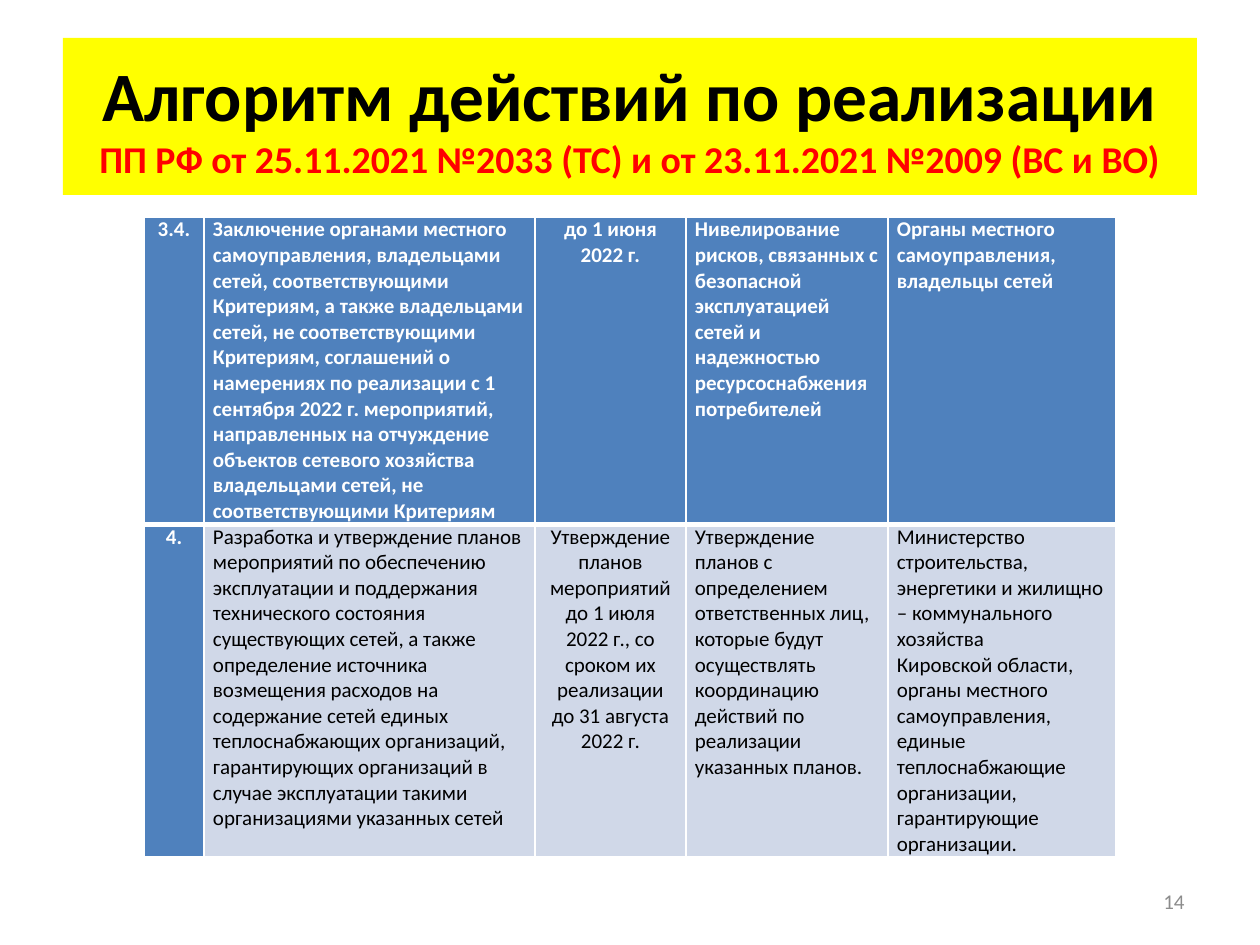
"""Build the action plan slide: a title banner, a table of steps and a page number."""
from dataclasses import dataclass

from lxml.etree import SubElement
from pptx import Presentation
from pptx.dml.color import RGBColor as RGB
from pptx.enum.shapes import MSO_SHAPE as SHAPE
from pptx.enum.text import MSO_ANCHOR as ANCHOR, PP_ALIGN as ALIGN
from pptx.oxml import parse_xml
from pptx.oxml.ns import nsdecls, qn
from pptx.util import Pt

EMU_PER_PX = 914400 / 126


@dataclass(frozen=True)
class Theme:
    font: str = "Calibri"
    white: str = "FFFFFF"
    black: str = "000000"
    red: str = "FF0000"
    grey: str = "8C8C8C"
    yellow: str = "FFFF00"
    blue: str = "4F81BD"
    pale: str = "D0D8E8"
    title: float = 39.6
    subtitle: float = 21.6
    body: float = 12
    thin: int = 1
    thick: int = 3


@dataclass(frozen=True)
class Box:
    x: int
    y: int
    w: int
    h: int

    def emu(self) -> tuple:
        return tuple(px(v) for v in (self.x, self.y, self.w, self.h))


@dataclass(frozen=True)
class Step:
    number: str
    action: str
    deadline: str
    result: str
    owners: str
    height: int

    def texts(self) -> tuple:
        return self.number, self.action, self.deadline, self.result, self.owners


T = Theme()
BANNER = Box(63, 38, 1134, 157)
TABLE = Box(144, 217, 972, 624)
PAGE = Box(903, 876, 294, 50)
COLUMNS = (60, 331, 151, 202, 228)
CENTRED = (0, 2)
PADDING = 9
TITLE = "Алгоритм действий по реализации"
SUBTITLE = "ПП РФ от 25.11.2021 №2033 (ТС) и от 23.11.2021 №2009 (ВС и ВО)"
STEPS = (
    Step(
        "3.4.",
        "Заключение органами местного самоуправления, владельцами сетей, "
        "соответствующими Критериям, а также владельцами сетей, не соответствующими "
        "Критериям, соглашений о намерениях по реализации с 1 сентября 2022 г. "
        "мероприятий, направленных на отчуждение объектов сетевого хозяйства "
        "владельцами сетей, не соответствующими Критериям",
        "до 1 июня 2022 г.",
        "Нивелирование рисков, связанных с безопасной эксплуатацией сетей и "
        "надежностью ресурсоснабжения\nпотребителей",
        "Органы местного самоуправления,\nвладельцы сетей",
        300,
    ),
    Step(
        "4.",
        "Разработка и утверждение планов мероприятий по обеспечению эксплуатации и "
        "поддержания технического состояния существующих сетей, а также определение "
        "источника возмещения расходов на содержание сетей единых теплоснабжающих "
        "организаций, гарантирующих организаций в случае эксплуатации такими "
        "организациями указанных сетей",
        "Утверждение планов мероприятий до 1 июля 2022 г., со сроком их реализации "
        "до 31 августа 2022 г.",
        "Утверждение планов с определением ответственных лиц, которые будут "
        "осуществлять координацию действий по реализации указанных планов.",
        "Министерство строительства, энергетики и жилищно – коммунального хозяйства\n"
        "Кировской области,\nорганы местного самоуправления,\n"
        "единые теплоснабжающие организации, гарантирующие организации.",
        324,
    ),
)


def px(value: int) -> int:
    return round(value * EMU_PER_PX)


def set_all(obj, formats: dict) -> None:
    for name, value in formats.items():
        setattr(obj, name, value)


def add_run(p, text: str, size: float, color: str, bold: bool = False) -> None:
    r = p.add_run()
    r.text = text
    set_all(r.font, {"name": T.font, "size": Pt(size), "bold": bold})
    r.font.color.rgb = RGB.from_string(color)


def add_banner(s) -> None:
    sp = s.shapes.add_shape(SHAPE.RECTANGLE, *BANNER.emu())
    sp.shadow.inherit = False
    sp.fill.solid()
    sp.fill.fore_color.rgb = RGB.from_string(T.yellow)
    sp.line.fill.background()
    tf = sp.text_frame
    set_all(tf, {"word_wrap": True, "vertical_anchor": ANCHOR.MIDDLE})
    p = tf.paragraphs[0]
    p.alignment = ALIGN.CENTER
    add_run(p, TITLE, T.title, T.black, True)
    p.add_line_break()
    add_run(p, SUBTITLE, T.subtitle, T.red, True)


def add_borders(cell, widths: dict) -> None:
    tc_pr = cell._tc.get_or_add_tcPr()
    for i, (side, width) in enumerate(widths.items()):
        ln = parse_xml(f'<a:ln{side} {nsdecls("a")} w="{Pt(width)}"/>')
        fill = SubElement(ln, qn("a:solidFill"))
        SubElement(fill, qn("a:srgbClr"), val=T.white)
        tc_pr.insert(i, ln)


def fill_cell(cell, text: str, row: int, col: int) -> None:
    head = row == 0 or col == 0
    set_all(cell, {"margin_left": px(PADDING), "margin_right": px(PADDING),
                   "margin_top": 0, "margin_bottom": 0})
    cell.fill.solid()
    cell.fill.fore_color.rgb = RGB.from_string(T.blue if head else T.pale)
    add_borders(cell, {"L": T.thin, "R": T.thin,
                       "T": T.thick if row else T.thin,
                       "B": T.thin if row else T.thick})
    tf = cell.text_frame
    for i, line in enumerate(text.split("\n")):
        p = tf.add_paragraph() if i else tf.paragraphs[0]
        p.alignment = ALIGN.CENTER if col in CENTRED else ALIGN.LEFT
        add_run(p, line, T.body, T.white if head else T.black, head)


def add_steps(s) -> None:
    table = s.shapes.add_table(len(STEPS), len(COLUMNS), *TABLE.emu()).table
    for column, width in zip(table.columns, COLUMNS):
        column.width = px(width)
    for row, step in enumerate(STEPS):
        table.rows[row].height = px(step.height)
        for col, text in enumerate(step.texts()):
            fill_cell(table.cell(row, col), text, row, col)


def add_page_number(s) -> None:
    tf = s.shapes.add_textbox(*PAGE.emu()).text_frame
    set_all(tf, {"word_wrap": True, "vertical_anchor": ANCHOR.MIDDLE})
    p = tf.paragraphs[0]
    p.alignment = ALIGN.RIGHT
    add_run(p, "14", T.body, T.grey)


def main() -> None:
    prs = Presentation()
    set_all(prs, {"slide_width": px(1260), "slide_height": px(945)})
    s = prs.slides.add_slide(prs.slide_layouts[6])
    add_banner(s)
    add_steps(s)
    add_page_number(s)
    prs.save("out.pptx")


if __name__ == "__main__":
    main()
